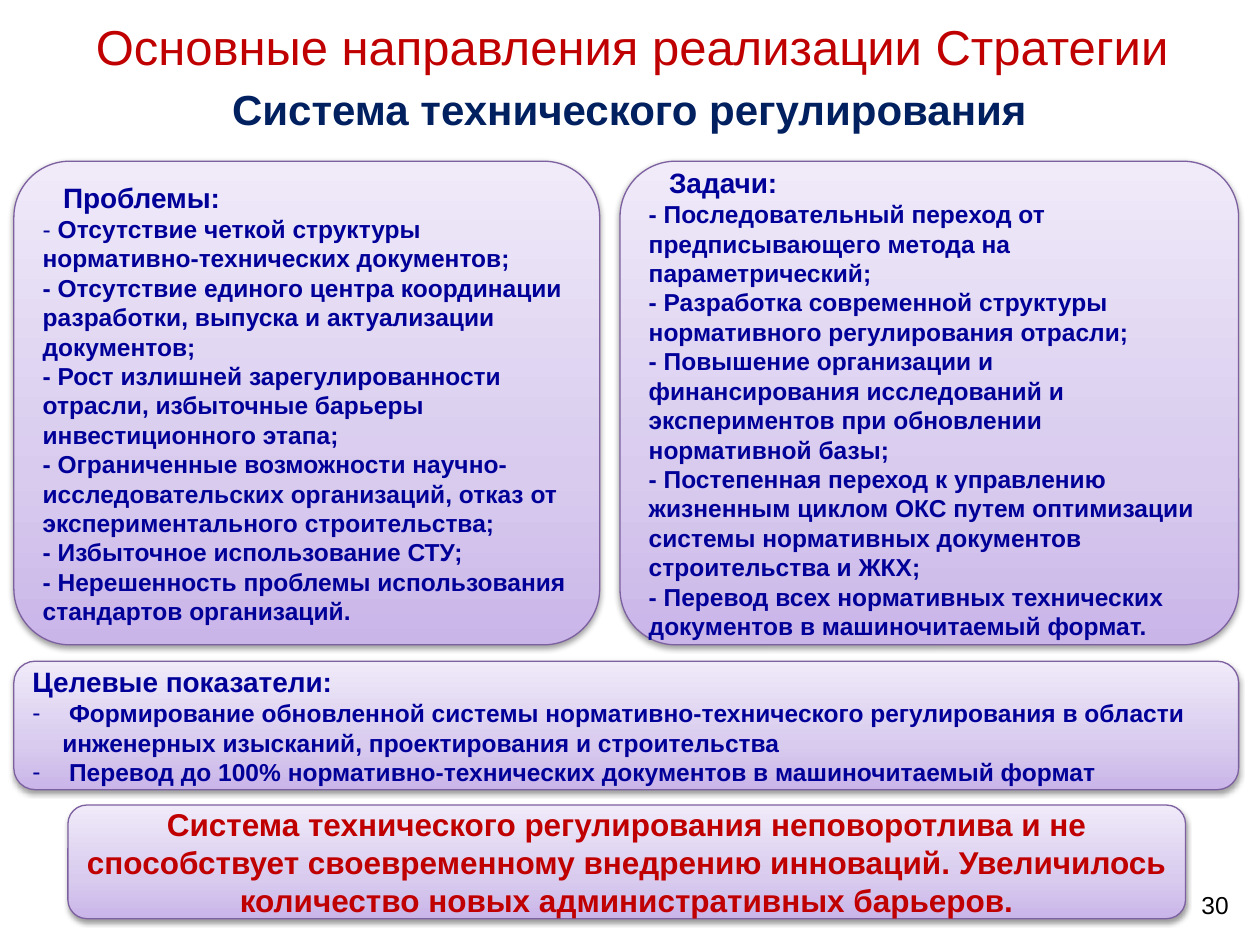
"""Build a slide on the technical regulation system: problems, tasks, targets and a conclusion."""
from copy import deepcopy

from lxml import etree
from pptx import Presentation
from pptx.dml.color import RGBColor
from pptx.enum import shapes, text
from pptx.oxml import parse_xml
from pptx.oxml.ns import nsdecls, qn
from pptx.util import Cm, Pt

NAVY, RED = "000099", "C00000"
LEFT, CENTER, RIGHT = text.PP_ALIGN.LEFT, text.PP_ALIGN.CENTER, text.PP_ALIGN.RIGHT
STOPS = [(0, "C9B5E8"), (0.35, "D8CBEE"), (1, "F0EAF9")]
SHADOW = (
    f'<a:effectLst {nsdecls("a")}><a:outerShdw blurRad="40000" dist="20000" dir="5400000" rotWithShape="0">'
    '<a:srgbClr val="000000"><a:alpha val="38000"/></a:srgbClr></a:outerShdw></a:effectLst>'
)


def rgb(value):
    return RGBColor.from_string(value)


def write(tf, lines, sizes, color, bold, align):
    tf.word_wrap = True
    tf.vertical_anchor = text.MSO_ANCHOR.MIDDLE
    for i, line in enumerate(lines):
        p = tf.paragraphs[0] if i == 0 else tf.add_paragraph()
        p.text = line
        p.alignment = align
        for r in p.runs:
            r.font.name = "Arial"
            r.font.size = Pt(sizes[min(i, len(sizes) - 1)])
            r.font.bold = bold
            r.font.color.rgb = rgb(color)


problems = [
    "Проблемы:",
    "Отсутствие четкой структуры нормативно-технических документов;",
    "- Отсутствие единого центра координации разработки, выпуска и актуализации документов;",
    "- Рост излишней зарегулированности отрасли, избыточные барьеры инвестиционного этапа;",
    "- Ограниченные возможности научно-исследовательских организаций, отказ от экспериментального строительства;",
    "- Избыточное использование СТУ;",
    "- Нерешенность проблемы использования стандартов организаций.",
]
tasks = [
    "Задачи:",
    "- Последовательный переход от предписывающего метода на параметрический;",
    "- Разработка современной структуры нормативного регулирования отрасли;",
    "- Повышение организации и финансирования исследований и экспериментов при обновлении нормативной базы;",
    "- Постепенная переход к управлению жизненным циклом ОКС путем оптимизации системы нормативных документов "
    "строительства и ЖКХ;",
    "- Перевод всех нормативных технических документов в машиночитаемый формат.",
]
targets = [
    "Целевые показатели:",
    " Формирование обновленной системы нормативно-технического регулирования в области инженерных изысканий, "
    "проектирования и строительства",
    " Перевод до 100% нормативно-технических документов в машиночитаемый формат",
]
conclusion = [
    "Система технического регулирования неповоротлива и не способствует своевременному внедрению инноваций. "
    "Увеличилось количество новых административных барьеров."
]

prs = Presentation()
prs.slide_width, prs.slide_height = Cm(25.4), Cm(19.05)
s = prs.slides.add_slide(prs.slide_layouts[6])

panels = [
    (0.28, 3.25, 11.81, 9.75, 0.116, problems, [16, 14], NAVY, LEFT),
    (12.5, 3.25, 12.47, 9.75, 0.115, tasks, [16, 14], NAVY, LEFT),
    (0.28, 13.33, 24.69, 2.59, 0.1667, targets, [16, 14], NAVY, LEFT),
    (1.37, 16.23, 22.53, 2.29, 0.1667, conclusion, [18], RED, CENTER),
]
frames = []
for x, y, w, h, adj, lines, sizes, color, align in panels:
    sp = s.shapes.add_shape(shapes.MSO_SHAPE.ROUNDED_RECTANGLE, Cm(x), Cm(y), Cm(w), Cm(h))
    sp.adjustments[0] = adj
    sp.fill.gradient()
    sp.fill.gradient_angle = 90
    gs_list = sp._element.spPr.find(".//" + qn("a:gsLst"))
    gs_list.append(deepcopy(gs_list[0]))
    for stop, (position, shade) in zip(sp.fill.gradient_stops, STOPS):
        stop.position = position
        stop.color.rgb = rgb(shade)
    sp.line.color.rgb = rgb("7D60A0")
    sp.line.width = Pt(0.75)
    sp._element.spPr.append(parse_xml(SHADOW))
    write(sp.text_frame, lines, sizes, color, True, align)
    frames.append(sp.text_frame)

for tf in frames[:2]:
    tf.paragraphs[0]._p.get_or_add_pPr().set("indent", str(Cm(0.41)))

p = frames[0].paragraphs[1]
dash = deepcopy(p.runs[0]._r)
p.runs[0]._r.addprevious(dash)
p.runs[0].text = "- "
p.runs[0].font.bold = False

for p in frames[2].paragraphs[1:]:
    pPr = p._p.get_or_add_pPr()
    pPr.set("marL", str(Cm(0.6)))
    pPr.set("indent", str(-Cm(0.6)))
    etree.SubElement(pPr, qn("a:buFont")).set("typeface", "Arial")
    etree.SubElement(pPr, qn("a:buChar")).set("char", "-")

labels = [
    (0.13, 1.12, 25.12, 2.13, "Система технического регулирования", 24, "002060", True, CENTER),
    (19.1, 17.73, 5.92, 1.02, "30", 14, "000000", False, RIGHT),
    (0.51, 0, 24.46, 1.85, "Основные направления реализации Стратегии", 28, RED, False, CENTER),
]
for x, y, w, h, label, size, color, bold, align in labels:
    sp = s.shapes.add_textbox(Cm(x), Cm(y), Cm(w), Cm(h))
    write(sp.text_frame, [label], [size], color, bold, align)

prs.save("out.pptx")
